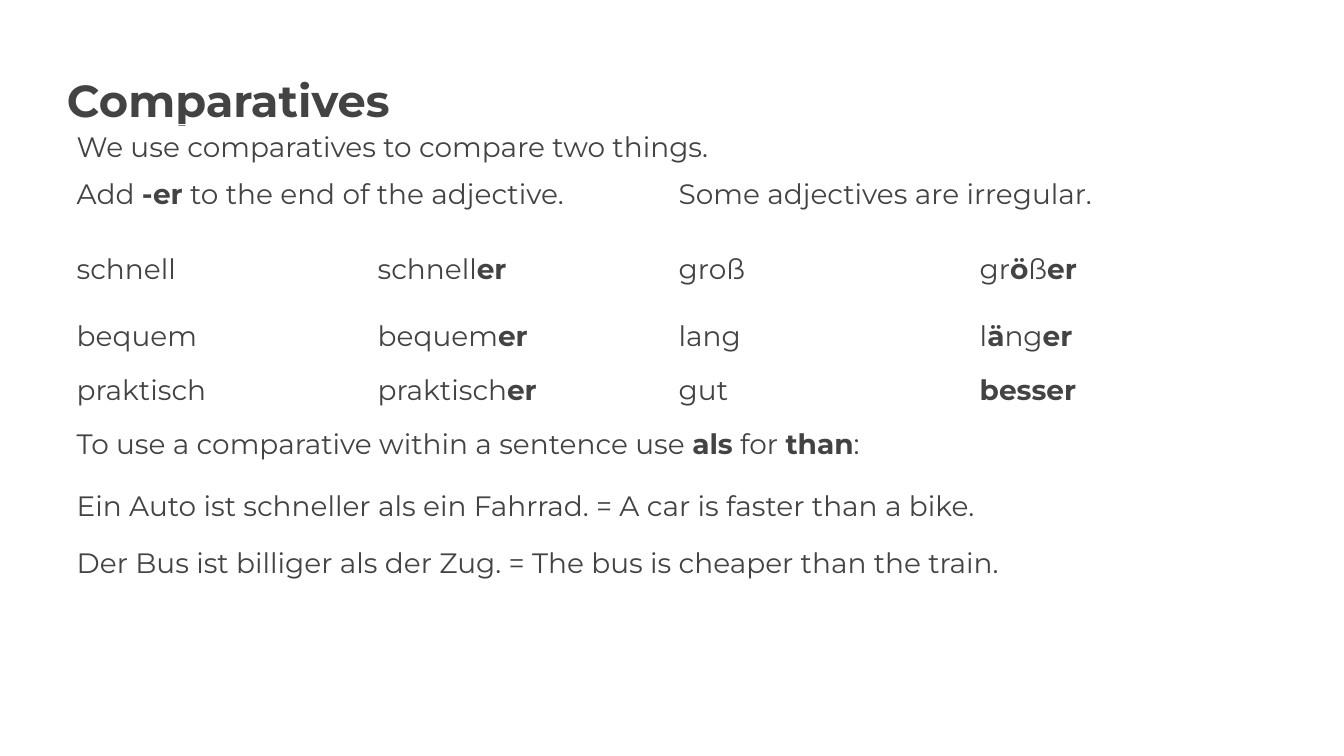
import pptx
import pptx.dml.color
import pptx.enum.text
import pptx.util

PX = 914400 / 67.2
FONT = "Montserrat"
GREY = pptx.dml.color.RGBColor(0x43, 0x43, 0x43)

COLUMN_WIDTH = 301
ROWS = [
    (28, ["We use comparatives to compare two things."]),
    (75, ["Add **-er** to the end of the adjective.", "Some adjectives are irregular."]),
    (67, ["schnell", "schnell**er**", "groß", "gr**ö**ß**er**"]),
    (54, ["bequem", "bequem**er**", "lang", "l**ä**ng**er**"]),
    (54, ["praktisch", "praktisch**er**", "gut", "**besser**"]),
    (62, ["To use a comparative within a sentence use **als** for **than**:"]),
    (57, ["Ein Auto ist schneller als ein Fahrrad. = A car is faster than a bike."]),
    (57, ["Der Bus ist billiger als der Zug. = The bus is cheaper than the train."]),
]


def px(length):
    return pptx.util.Emu(round(length * PX))


def add_runs(paragraph, marked_text, size):
    for index, text in enumerate(marked_text.split("**")):
        if text:
            run = paragraph.add_run()
            run.text = text
            run.font.name = FONT
            run.font.size = pptx.util.Pt(size)
            run.font.bold = index % 2 == 1
            run.font.color.rgb = GREY


def add_title(slide, left, top, width, height):
    shape = slide.shapes.add_textbox(px(left), px(top), px(width), px(height))
    frame = shape.text_frame
    frame.word_wrap = True
    frame.vertical_anchor = pptx.enum.text.MSO_ANCHOR.TOP
    frame.margin_left = frame.margin_right = frame.margin_top = frame.margin_bottom = 0
    paragraph = frame.paragraphs[0]
    paragraph.line_spacing = 1.15
    add_runs(paragraph, "**Comparatives**", 48)


def add_comparison_table(slide, left, top):
    column_count = max(len(texts) for _, texts in ROWS)
    height = sum(row_height for row_height, _ in ROWS)
    table = slide.shapes.add_table(
        len(ROWS), column_count, px(left), px(top),
        px(column_count * COLUMN_WIDTH), px(height)).table
    table.first_row = False
    table.horz_banding = False
    for column in table.columns:
        column.width = px(COLUMN_WIDTH)
    for row_index, (row_height, texts) in enumerate(ROWS):
        table.rows[row_index].height = px(row_height)
        for cell in table.rows[row_index].cells:
            cell.fill.background()
        span = column_count // len(texts)
        for text_index, text in enumerate(texts):
            first = text_index * span
            cell = table.cell(row_index, first)
            if span > 1:
                cell.merge(table.cell(row_index, first + span - 1))
            cell.margin_left = cell.margin_right = pptx.util.Inches(0.1)
            cell.margin_top = cell.margin_bottom = pptx.util.Inches(0.1)
            paragraph = cell.text_frame.paragraphs[0]
            if row_index > 0:
                paragraph.space_after = pptx.util.Pt(20)
            add_runs(paragraph, text, 30)


def main():
    presentation = pptx.Presentation()
    presentation.slide_width = px(1344)
    presentation.slide_height = px(756)
    slide = presentation.slides.add_slide(presentation.slide_layouts[6])
    add_title(slide, 67, 65, 970, 120)
    add_comparison_table(slide, 70, 124)
    presentation.save("out.pptx")


if __name__ == "__main__":
    main()
